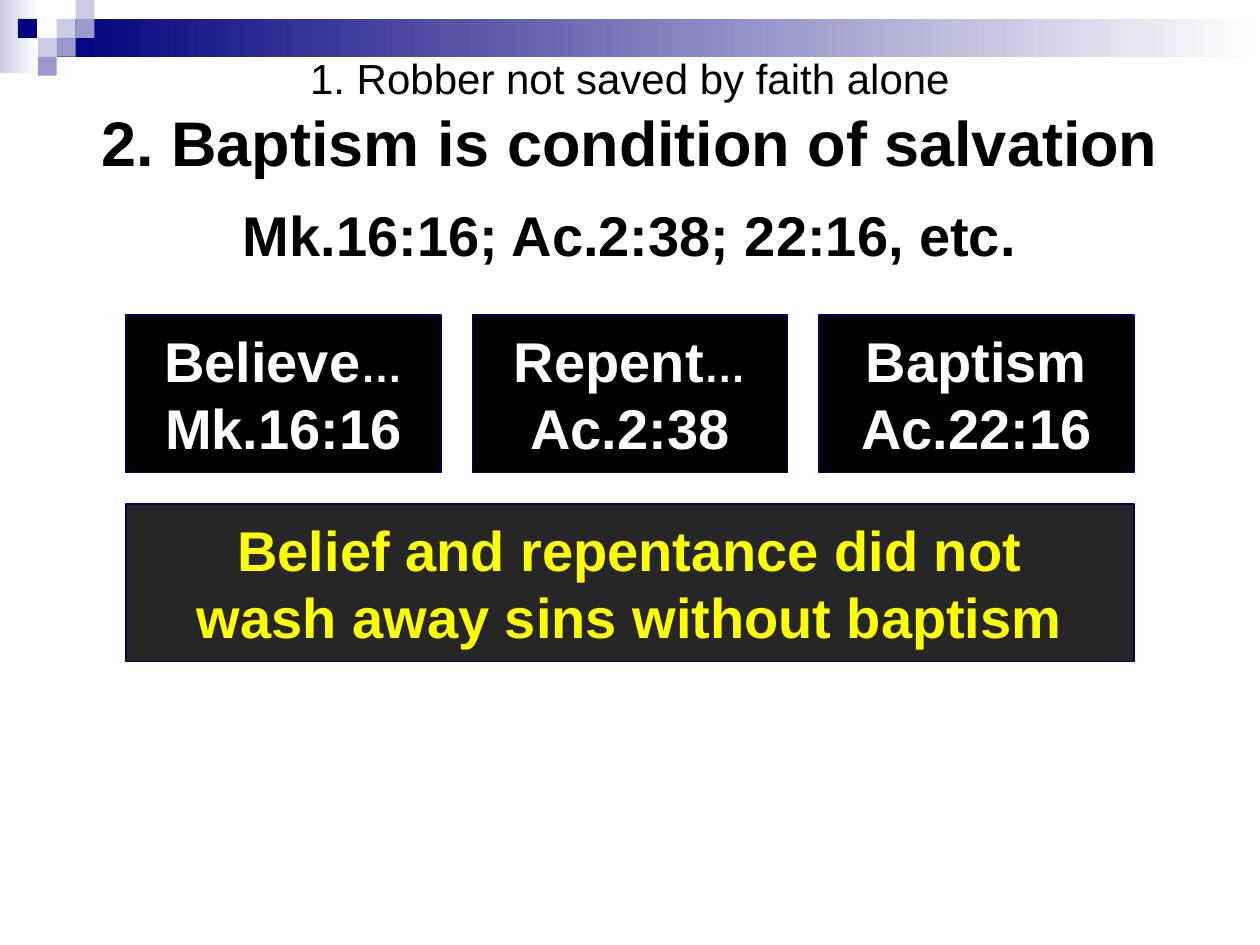
from dataclasses import dataclass

from pptx import Presentation
from pptx.dml.color import RGBColor
from pptx.enum.shapes import MSO_SHAPE
from pptx.enum.text import MSO_ANCHOR, PP_ALIGN
from pptx.util import Inches, Pt

UNIT = 0.25  # content grid, inches
TILE = 0.15  # corner mosaic grid, inches
NAVY, LILAC, VIOLET = "00007D", "CCCCE6", "9999CC"
BLACK, WHITE, YELLOW = "000000", "FFFFFF", "FFFF00"


@dataclass
class Area:
    col: float
    row: float
    cols: float
    rows: float
    unit: float = UNIT

    def lengths(self) -> list:
        return [Inches(n * self.unit) for n in (self.col, self.row, self.cols, self.rows)]


@dataclass
class Panel:
    area: Area
    text: str
    fill: str = BLACK
    color: str = WHITE
    trailing: str = ""  # smaller ending of the first line


def rgb(value: str) -> RGBColor:
    return RGBColor.from_string(value)


def add_block(shapes, area: Area, *colors: str):
    """Draw a rectangle: one colour is solid, two fade from left to right."""
    block = shapes.add_shape(MSO_SHAPE.RECTANGLE, *area.lengths())
    block.shadow.inherit = False
    block.line.fill.background()
    if len(colors) == 1:
        block.fill.solid()
        block.fill.fore_color.rgb = rgb(colors[0])
    else:
        block.fill.gradient()
        block.fill.gradient_angle = 0
        for stop, color in zip(block.fill.gradient_stops, colors):
            stop.color.rgb = rgb(color)
    return block


def style_run(run, size: float, color: str, bold: bool = True) -> None:
    run.font.name = "Arial"
    run.font.size = Pt(size)
    run.font.bold = bold
    run.font.color.rgb = rgb(color)


def write(frame, text: str, color: str, size: float = 32) -> None:
    frame.word_wrap = True
    frame.text = text
    for paragraph in frame.paragraphs:
        paragraph.alignment = PP_ALIGN.CENTER
        for run in paragraph.runs:
            style_run(run, size, color)


def add_panel(shapes, panel: Panel) -> None:
    block = add_block(shapes, panel.area, panel.fill)
    block.line.color.rgb = rgb("00005E")
    block.line.width = Pt(0.75)
    frame = block.text_frame
    frame.vertical_anchor = MSO_ANCHOR.MIDDLE
    write(frame, panel.text, panel.color)
    if panel.trailing:
        ending = frame.paragraphs[0].add_run()
        ending.text = panel.trailing
        style_run(ending, 24, panel.color)


def main() -> None:
    deck = Presentation()
    deck.slide_width, deck.slide_height = Inches(10), Inches(7.5)
    shapes = deck.slides.add_slide(deck.slide_layouts[6]).shapes

    # Banner and corner mosaic
    add_block(shapes, Area(0, 0, 0.31, 0.58, unit=1), LILAC, WHITE)
    add_block(shapes, Area(0.45, 0.15, 9.55, 0.3, unit=1), NAVY, WHITE)
    mosaic = [(3, 1, LILAC), (4, 0, LILAC), (4, 1, VIOLET), (2, 2, LILAC),
              (0.95, 1, NAVY), (3, 2, VIOLET), (2, 3, VIOLET)]
    for col, row, color in mosaic:
        add_block(shapes, Area(col, row, 1, 1, unit=TILE), color)

    # Title
    title = shapes.add_textbox(*Area(2, 1.68, 36, 4).lengths()).text_frame
    title.vertical_anchor = MSO_ANCHOR.MIDDLE
    write(title, "1. Robber not saved by faith alone\v"
                 "2. Baptism is condition of salvation", BLACK, 36)
    style_run(title.paragraphs[0].runs[0], 24, BLACK, bold=False)

    # Scripture references
    references = shapes.add_textbox(*Area(2, 6, 36, 23).lengths()).text_frame
    references.margin_top = Inches(0.09)
    write(references, "Mk.16:16; Ac.2:38; 22:16, etc.", BLACK)

    # Three steps above the conclusion
    steps = [("Believe\nMk.16:16", "…"), ("Repent\nAc.2:38", "…"), ("Baptism\nAc.22:16", "")]
    for index, (text, trailing) in enumerate(steps):
        add_panel(shapes, Panel(Area(4 + 11 * index, 10, 10, 5), text, trailing=trailing))
    add_panel(shapes, Panel(
        Area(4, 16, 32, 5),
        "Belief and repentance did not\vwash away sins without baptism",
        fill="262626", color=YELLOW))

    deck.save("out.pptx")


if __name__ == "__main__":
    main()
